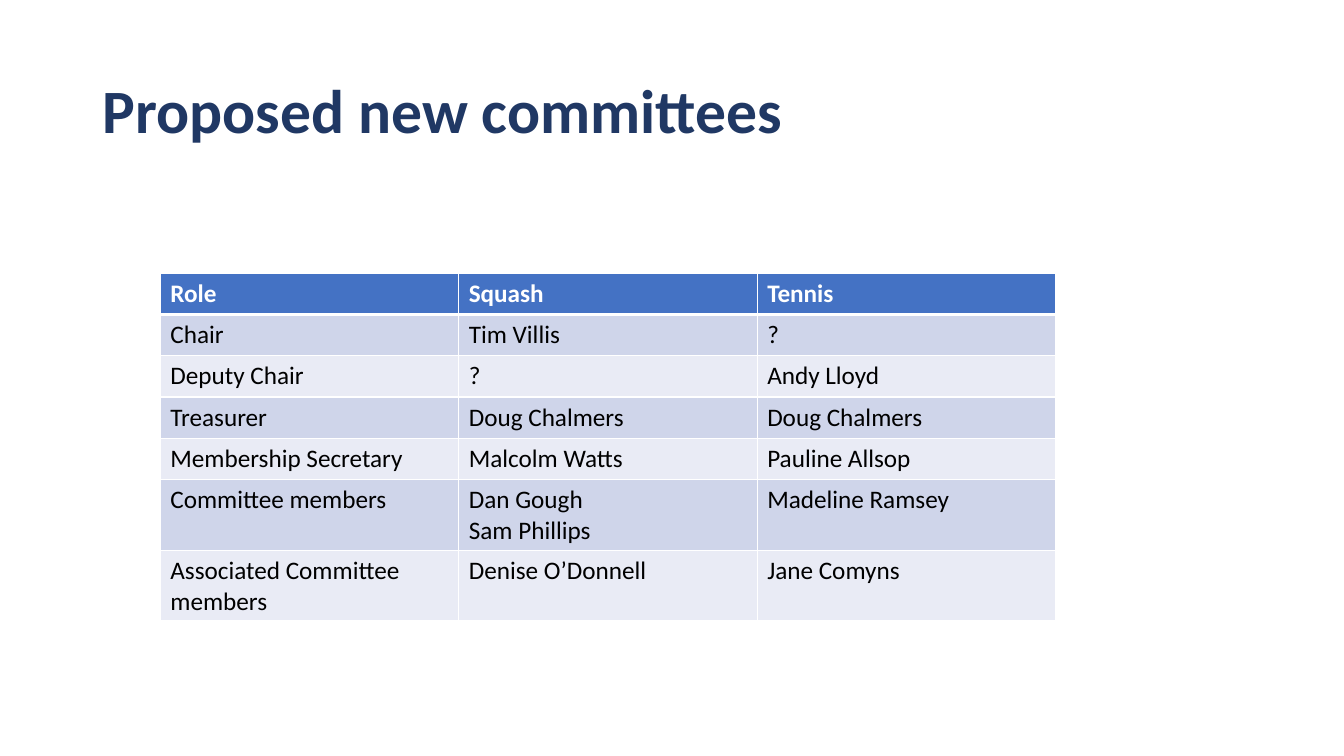
"""Build the slide that lists the proposed squash and tennis committees."""
import dataclasses

import pptx
import pptx.dml.color
import pptx.enum.text
import pptx.oxml.ns
import pptx.util
from lxml import etree

Inches = pptx.util.Inches
Pt = pptx.util.Pt


@dataclasses.dataclass(frozen=True)
class Theme:
    """Hold the colours, font and type sizes."""
    font: str = "Calibri"
    title: str = "203864"
    head: str = "4472C4"
    bands: tuple = ("CFD5EA", "E9EBF5")
    light: str = "FFFFFF"
    dark: str = "000000"
    big: int = 44
    body: int = 18


theme = Theme()


def style(para, size, color, bold):
    """Format every run of a paragraph."""
    for run in para.runs:
        run.font.name = theme.font
        run.font.size = Pt(size)
        run.font.bold = bold
        run.font.color.rgb = pptx.dml.color.RGBColor.from_string(color)


def edge(cell, side, width):
    """Draw one border of a cell."""
    qn = pptx.oxml.ns.qn
    props = cell._tc.get_or_add_tcPr()
    line = etree.SubElement(props, qn("a:" + side), w=str(Pt(width)))
    fill = etree.SubElement(line, qn("a:solidFill"))
    etree.SubElement(fill, qn("a:srgbClr"), val=theme.light)


deck = pptx.Presentation()
deck.slide_width = Inches(13.33)
deck.slide_height = Inches(7.5)
slide = deck.slides.add_slide(deck.slide_layouts[6])

title = slide.shapes.add_textbox(Inches(0.92), Inches(0.4), Inches(11.5), Inches(1.45))
frame = title.text_frame
frame.word_wrap = True
frame.vertical_anchor = pptx.enum.text.MSO_ANCHOR.MIDDLE
frame.text = "Proposed new committees"
frame.paragraphs[0].line_spacing = 0.9
style(frame.paragraphs[0], theme.big, theme.title, True)

rows = [
    ("Role", "Squash", "Tennis"),
    ("Chair", "Tim Villis", "?"),
    ("Deputy Chair", "?", "Andy Lloyd"),
    ("Treasurer", "Doug Chalmers", "Doug Chalmers"),
    ("Membership Secretary", "Malcolm Watts", "Pauline Allsop"),
    ("Committee members", "Dan Gough\nSam Phillips", "Madeline Ramsey"),
    ("Associated Committee members", "Denise O’Donnell", "Jane Comyns"),
]
tall = 5

table = slide.shapes.add_table(
    len(rows), 3, Inches(1.59), Inches(2.71), Inches(8.89), Inches(3.43)
).table
for col in table.columns:
    col.width = Inches(2.96)

for r, row in enumerate(rows):
    table.rows[r].height = Inches(0.7 if r >= tall else 0.41)
    top = r == 0
    back = theme.head if top else theme.bands[(r - 1) % 2]
    for c, text in enumerate(row):
        cell = table.cell(r, c)
        cell.text_frame.text = text
        for para in cell.text_frame.paragraphs:
            style(para, theme.body, theme.light if top else theme.dark, top)
        for side in ("lnL", "lnR", "lnT", "lnB"):
            thick = (top and side == "lnB") or (r == 1 and side == "lnT")
            edge(cell, side, 3 if thick else 1)
        cell.fill.solid()
        cell.fill.fore_color.rgb = pptx.dml.color.RGBColor.from_string(back)

deck.save("out.pptx")
